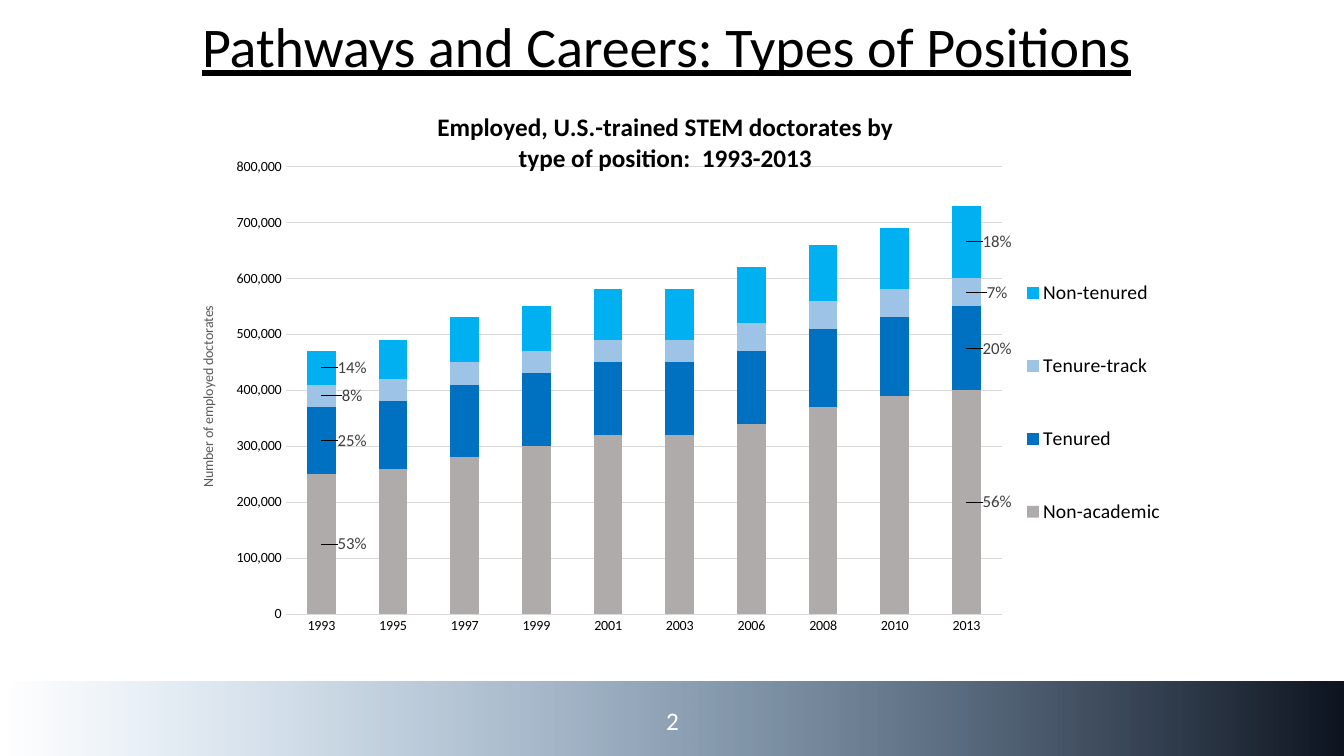
from lxml import etree
from pptx import Presentation
from pptx import util as u
from pptx.chart.data import CategoryChartData
from pptx.dml.color import RGBColor
from pptx.enum import chart as kinds, shapes, text
from pptx.oxml import parse_xml
from pptx.oxml.ns import qn

HUES = {"ink": "000000", "white": "FFFFFF", "label": "404040", "axis": "595959",
        "grid": "D9D9D9", "start": "2E75B6", "end": "0E1420"}
FACE = "Calibri"
HEAD = "Pathways and Careers: Types of Positions"
PAGE = "2"
TITLE = ["Employed, U.S.-trained STEM doctorates by", "type of position:  1993-2013"]
AXIS = ["Number of employed doctorates"]
YEARS = ["1993", "1995", "1997", "1999", "2001", "2003", "2006", "2008", "2010", "2013"]
UNIT = 10000
SERIES = [
    ("Non-academic", "AFABAB", [25, 26, 28, 30, 32, 32, 34, 37, 39, 40], ("53%", "56%")),
    ("Tenured", "0070C0", [12, 12, 13, 13, 13, 13, 13, 14, 14, 15], ("25%", "20%")),
    ("Tenure-track", "9DC3E6", [4, 4, 4, 4, 4, 4, 5, 5, 5, 5], ("8%", "7%")),
    ("Non-tenured", "00B0F0", [6, 7, 8, 8, 9, 9, 10, 10, 11, 13], ("14%", "18%")),
]
BOXES = {"band": (0, 6.76, 13.33, 0.74), "page": (5.17, 6.95, 3, 0.4),
         "chart": (1.49, 0.84, 10.17, 5.63), "head": (0.48, 0.14, 12.26, 0.89)}
PLOT = {"x": 0.132, "y": 0.144, "w": 0.699, "h": 0.789}
LEGEND = {"x": 0.85, "y": 0.26, "w": 0.14, "h": 0.6}
SHIFT = {"x": 0.03, "y": 0}
C = 'xmlns:c="http://schemas.openxmlformats.org/drawingml/2006/chart"'
C15 = 'xmlns:c15="http://schemas.microsoft.com/office/drawing/2012/chart"'
LEADER = (f'<c:extLst {C}><c:ext uri="{{CE6537A1-D6FC-4f65-9D91-7224C49458BB}}" {C15}>'
          '<c15:showLeaderLines val="1"/></c:ext></c:extLst>')


def rgb(hue):
    return RGBColor.from_string(HUES.get(hue, hue))


def box(name):
    return [u.Inches(n) for n in BOXES[name]]


def style(font, size, hue="ink", **more):
    for key, val in {"name": FACE, "size": u.Pt(size), **more}.items():
        setattr(font, key, val)
    font.color.rgb = rgb(hue)


def place(node, spot, rank, edge=True, inner=False):
    for old in node.findall(qn("c:layout")):
        node.remove(old)
    tags = '<c:layoutTarget val="inner"/>' if inner else ""
    if edge:
        tags += '<c:xMode val="edge"/><c:yMode val="edge"/>'
    tags += "".join(f'<c:{key} val="{val}"/>' for key, val in spot.items())
    node.insert(rank, parse_xml(
        f"<c:layout {C}><c:manualLayout>{tags}</c:manualLayout></c:layout>"))


def write(slide, name, words, size, hue, **more):
    frame = slide.shapes.add_textbox(*box(name)).text_frame
    frame.word_wrap = True
    para = frame.paragraphs[0]
    para.alignment = text.PP_ALIGN.CENTER
    run = para.add_run()
    run.text = words
    style(run.font, size, hue, **more)
    return frame


def caption(title, lines, spot, size, hue, **more):
    frame = title.text_frame
    for i, line in enumerate(lines):
        para = frame.add_paragraph() if i else frame.paragraphs[0]
        run = para.add_run()
        run.text = line
        style(run.font, size, hue, **more)
    place(title._element, spot, 1)


def add_band(slide):
    band = slide.shapes.add_shape(shapes.MSO_SHAPE.RECTANGLE, *box("band"))
    band.shadow.inherit = False
    band.line.fill.background()
    band.fill.gradient()
    band.fill.gradient_angle = 0
    for stop, hue in zip(band.fill.gradient_stops, ("start", "end")):
        stop.color.rgb = rgb(hue)
    first = next(band._element.iter(qn("a:srgbClr")))
    etree.SubElement(first, qn("a:alpha")).set("val", "0")


def add_bars(slide):
    data = CategoryChartData(number_format="#,##0")
    data.categories = YEARS
    for name, _, vals, _ in SERIES:
        data.add_series(name, [v * UNIT for v in vals])
    chart = slide.shapes.add_chart(
        kinds.XL_CHART_TYPE.COLUMN_STACKED, *box("chart"), data).chart
    style(chart.font, 10)
    plot = chart.plots[0]
    for key, val in {"gap_width": 150, "overlap": 100, "vary_by_categories": False}.items():
        setattr(plot, key, val)
    for row, (_, hue, _, marks) in zip(plot.series, SERIES):
        row.format.fill.solid()
        row.format.fill.fore_color.rgb = rgb(hue)
        row.data_labels.show_value = False
        for at, mark in zip((0, len(YEARS) - 1), marks):
            run = row.points[at].data_label.text_frame.paragraphs[0].add_run()
            run.text = mark
            style(run.font, 12, "label")
        group = row.data_labels._element
        for node in group.findall(qn("c:dLbl")):
            place(node, SHIFT, 1, edge=False)
        group.append(parse_xml(LEADER))
    chart.has_title = True
    caption(chart.chart_title, TITLE, {"x": 0.277, "y": 0.04}, 18, "ink", bold=True)
    set_axes(chart)
    chart.has_legend = True
    key = chart.legend
    key.position = kinds.XL_LEGEND_POSITION.RIGHT
    key.include_in_layout = False
    style(key.font, 14)
    place(key._element, LEGEND, 1)
    place(chart._chartSpace.chart.plotArea, PLOT, 0, inner=True)


def set_axes(chart):
    cat, val = chart.category_axis, chart.value_axis
    for axis in (cat, val):
        axis.major_tick_mark = axis.minor_tick_mark = kinds.XL_TICK_MARK.NONE
        style(axis.tick_labels.font, 10)
    for key, num in {"minimum_scale": 0, "maximum_scale": 800000, "major_unit": 100000,
                     "has_major_gridlines": True, "has_title": True}.items():
        setattr(val, key, num)
    val.tick_labels.number_format = "#,##0"
    val.tick_labels.number_format_is_linked = False
    val.format.line.fill.background()
    for part in (cat, val.major_gridlines):
        part.format.line.color.rgb = rgb("grid")
        part.format.line.width = u.Pt(0.75)
    caption(val.axis_title, AXIS, {"x": 0.045, "y": 0.385}, 10, "axis", bold=False)
    body = val.axis_title.text_frame._txBody.bodyPr
    for key, num in {"rot": "-5400000", "vert": "horz"}.items():
        body.set(key, num)


def main():
    deck = Presentation()
    deck.slide_width, deck.slide_height = u.Inches(13.33), u.Inches(7.5)
    slide = deck.slides.add_slide(deck.slide_layouts[6])
    add_band(slide)
    page = write(slide, "page", PAGE, 18, "white")
    page.vertical_anchor = text.MSO_ANCHOR.MIDDLE
    add_bars(slide)
    head = write(slide, "head", HEAD, 40, "ink", underline=True)
    head.paragraphs[0].line_spacing = 0.9
    deck.save("out.pptx")


if __name__ == "__main__":
    main()
